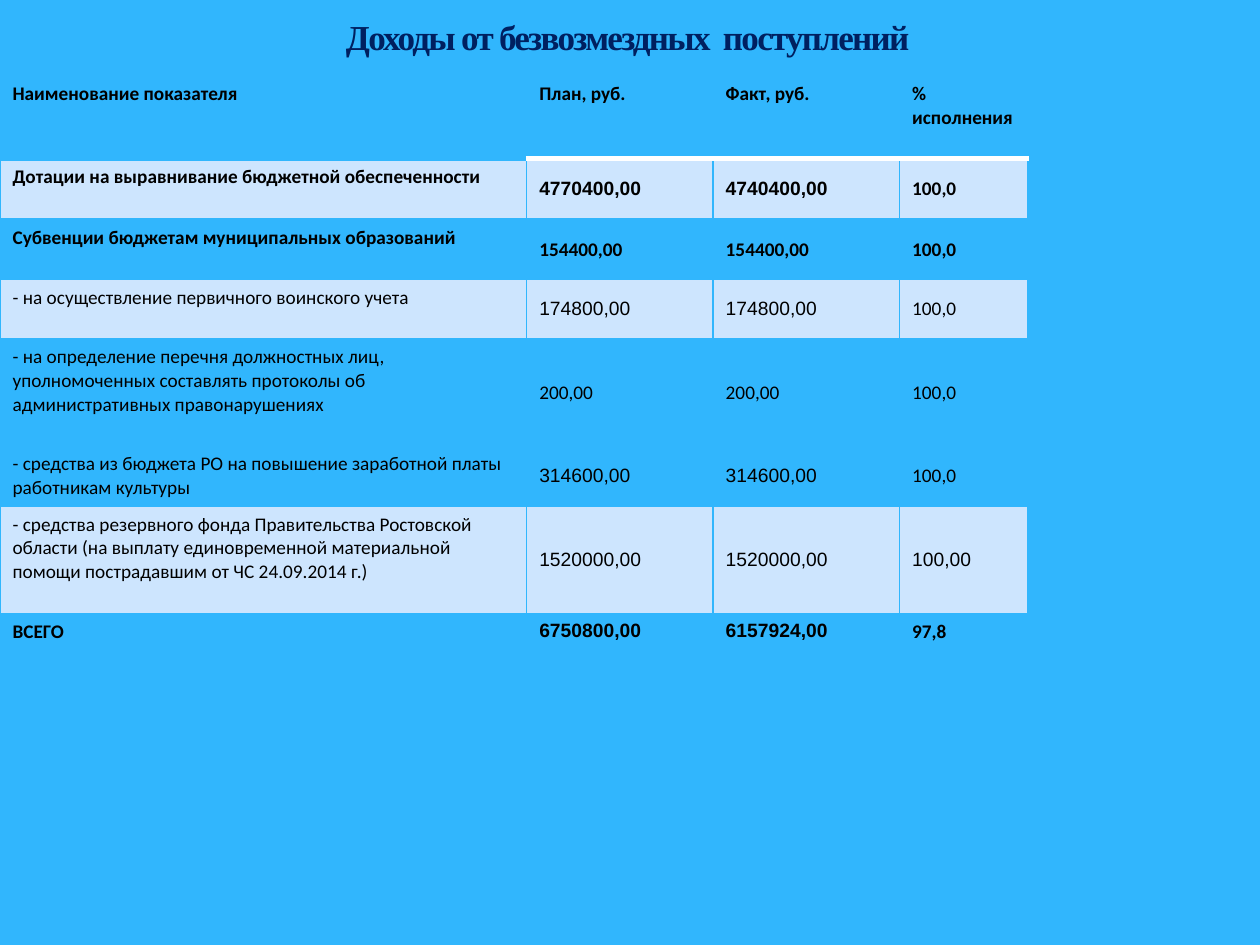
from lxml import etree
from pptx import Presentation
from pptx.dml.color import RGBColor
from pptx.enum.text import MSO_ANCHOR, PP_ALIGN
from pptx.oxml.ns import qn
from pptx.util import Inches, Pt

TOP, MIDDLE = MSO_ANCHOR.TOP, MSO_ANCHOR.MIDDLE
CENTER = PP_ALIGN.CENTER

COLORS = {
    "background": "31B6FD",
    "band": "CDE5FE",
    "title": "002060",
    "outline": "AFCCDE",
    "text": "000000",
    "rule": "FFFFFF",
}
SANS, BODY, SERIF = "Arial", "Calibri", "Times New Roman"

COLUMN_WIDTHS = [4.18, 1.48, 1.48, 1.02]
BANDED_ROWS = {1, 3, 6}
# Height, bold, font of the amounts, font of the percentage, cell texts
ROWS = [
    (0.66, True, BODY, BODY,
     ["Наименование показателя", "План, руб.", "Факт, руб.", "% исполнения"]),
    (0.48, True, SANS, BODY,
     ["Дотации на выравнивание бюджетной обеспеченности",
      "4770400,00", "4740400,00", "100,0"]),
    (0.48, True, BODY, BODY,
     ["Субвенции бюджетам муниципальных образований",
      "154400,00", "154400,00", "100,0"]),
    (0.47, False, SANS, BODY,
     ["- на осуществление первичного воинского учета",
      "174800,00", "174800,00", "100,0"]),
    (0.85, False, BODY, BODY,
     ["- на определение перечня должностных лиц, уполномоченных составлять "
      "протоколы об административных правонарушениях",
      "200,00", "200,00", "100,0"]),
    (0.48, False, SANS, BODY,
     ["- средства из бюджета РО на повышение заработной платы работникам культуры",
      "314600,00", "314600,00", "100,0"]),
    (0.85, False, SANS, SANS,
     ["- средства резервного фонда Правительства Ростовской области (на выплату "
      "единовременной материальной помощи пострадавшим от ЧС 24.09.2014 г.)",
      "1520000,00", "1520000,00", "100,00"]),
    (0.48, True, SANS, BODY,
     ["ВСЕГО", "6750800,00", "6157924,00", "97,8"]),
]


def rgb(name):
    return RGBColor.from_string(COLORS[name])


def add_run(paragraph, text, font, size, color, bold):
    run = paragraph.add_run()
    run.text = text
    run.font.name = font
    run.font.size = Pt(size)
    run.font.bold = bold
    run.font.color.rgb = rgb(color)
    return run


def add_solid_fill(parent, color):
    fill = etree.SubElement(parent, qn("a:solidFill"))
    return etree.SubElement(fill, qn("a:srgbClr"), val=COLORS[color])


def set_border(cell, side, color, width):
    """Add one border; call before the cell gets its fill."""
    properties = cell._tc.get_or_add_tcPr()
    line = etree.SubElement(properties, qn(f"a:{side}"), w=str(Pt(width)))
    add_solid_fill(line, color)


def add_title(slide, left, top, width, height):
    box = slide.shapes.add_textbox(left, top, width, height)
    frame = box.text_frame
    frame.word_wrap = True
    frame.vertical_anchor = MIDDLE
    paragraph = frame.paragraphs[0]
    paragraph.alignment = CENTER
    run = add_run(paragraph, "Доходы от безвозмездных  поступлений",
                  SERIF, 20, "title", True)
    # Tight letter spacing and a faint outline
    properties = run.font._element
    properties.set("spc", "-100")
    outline = etree.Element(qn("a:ln"), w=str(Pt(0.25)))
    color = add_solid_fill(outline, "outline")
    etree.SubElement(color, qn("a:alpha"), val="25000")
    properties.insert(0, outline)


def style_cell(cell, row, column):
    # Thick rule below the header, white under the figures
    header_rule = ("rule" if column else "background", 3)
    plain = ("background", 1)
    set_border(cell, "lnL", *plain)
    set_border(cell, "lnR", *plain)
    set_border(cell, "lnT", *(header_rule if row == 1 else plain))
    set_border(cell, "lnB", *(header_rule if row == 0 else plain))
    if row in BANDED_ROWS or row == 0:
        cell.fill.solid()
        cell.fill.fore_color.rgb = rgb("band" if row else "background")
    else:
        cell.fill.background()
    is_figure = column > 0 and 0 < row < len(ROWS) - 1
    cell.vertical_anchor = MIDDLE if is_figure else TOP


def add_income_table(slide, left, top, width, height):
    table = slide.shapes.add_table(
        len(ROWS), len(COLUMN_WIDTHS), left, top, width, height).table
    table.first_row = False
    table.horz_banding = False
    for column, share in zip(table.columns, COLUMN_WIDTHS):
        column.width = int(width * share / sum(COLUMN_WIDTHS))
    total = sum(row[0] for row in ROWS)
    for r, (share, bold, amount_font, percent_font, texts) in enumerate(ROWS):
        table.rows[r].height = int(height * share / total)
        fonts = [BODY, amount_font, amount_font, percent_font]
        for c, (text, font) in enumerate(zip(texts, fonts)):
            cell = table.cell(r, c)
            style_cell(cell, r, c)
            add_run(cell.text_frame.paragraphs[0], text, font, 11, "text", bold)


def main():
    presentation = Presentation()
    presentation.slide_width = Inches(10)
    presentation.slide_height = Inches(7.5)
    slide = presentation.slides.add_slide(presentation.slide_layouts[6])
    slide.background.fill.solid()
    slide.background.fill.fore_color.rgb = rgb("background")
    add_title(slide, Inches(1.14), Inches(0), Inches(7.68), Inches(0.58))
    add_income_table(slide, Inches(0), Inches(0.6), Inches(8.16), Inches(4.75))
    presentation.save("out.pptx")


if __name__ == "__main__":
    main()
